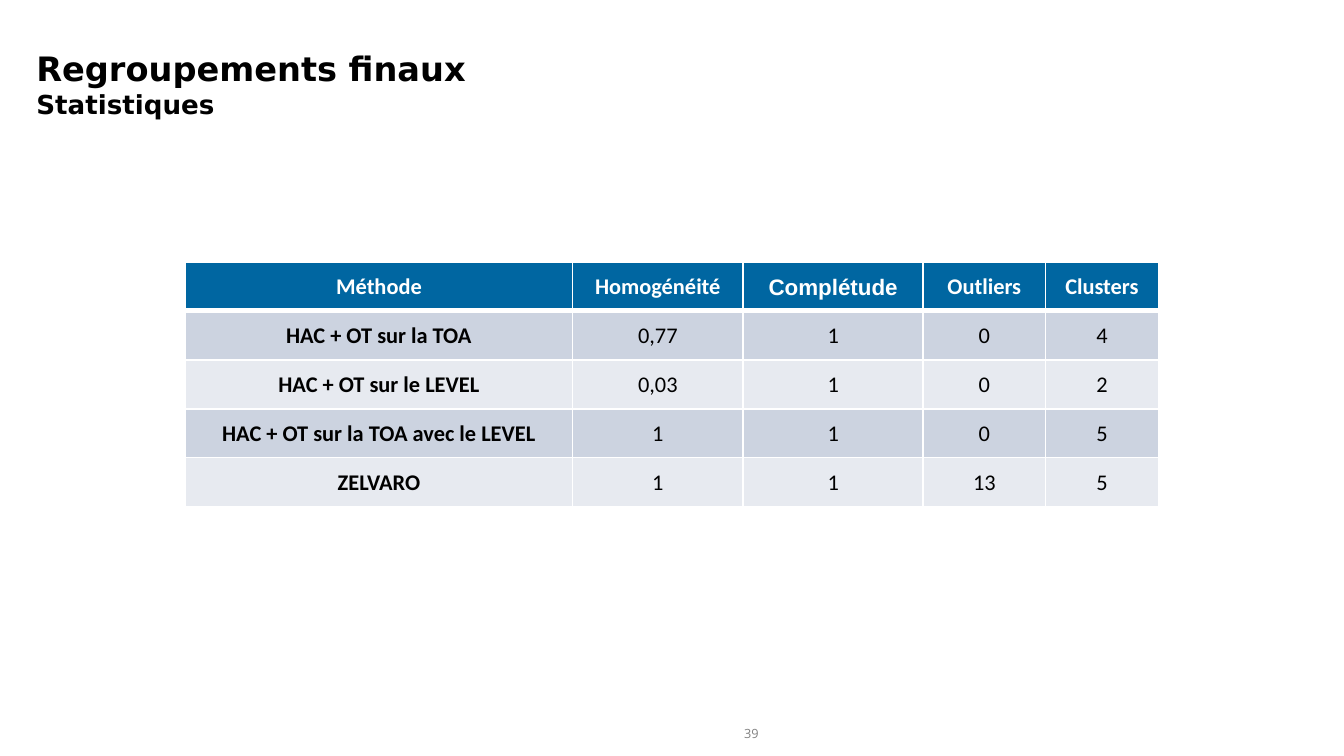
import copy
from dataclasses import dataclass

import lxml.etree
import pptx
import pptx.dml.color
import pptx.enum.text
import pptx.oxml.ns
import pptx.util

RGBColor = pptx.dml.color.RGBColor
WHITE = RGBColor(0xFF, 0xFF, 0xFF)
BLACK = RGBColor(0x00, 0x00, 0x00)
GRAY = RGBColor(0x81, 0x81, 0x81)
HEADER_BLUE = RGBColor(0x00, 0x66, 0xA1)
BAND_COLORS = (RGBColor(0xCC, 0xD3, 0xE0), RGBColor(0xE7, 0xEA, 0xF0))

# Widescreen slide, 16 by 9
SLIDE_WIDTH = pptx.util.Inches(10)
SLIDE_HEIGHT = SLIDE_WIDTH * 9 // 16
TABLE_HEIGHT = pptx.util.Inches(1.82)


@dataclass
class Column:
    heading: str
    width: float  # inches
    font: str = "Calibri"


@dataclass
class TextStyle:
    font: str
    size: float
    color: RGBColor
    bold: bool = False


COLUMNS = (
    Column("Méthode", 2.88),
    Column("Homogénéité", 1.27),
    Column("Complétude", 1.34, "Arial"),
    Column("Outliers", 0.91),
    Column("Clusters", 0.84),
)
RESULTS = (
    ("HAC + OT sur la TOA", "0,77", "1", "0", "4"),
    ("HAC + OT sur le LEVEL", "0,03", "1", "0", "2"),
    ("HAC + OT sur la TOA avec le LEVEL", "1", "1", "0", "5"),
    ("ZELVARO", "1", "1", "13", "5"),
)


def format_run(run, style: TextStyle) -> None:
    run.font.name = style.font
    run.font.size = pptx.util.Pt(style.size)
    run.font.bold = style.bold
    run.font.color.rgb = style.color


def set_borders(cell, top: float, bottom: float) -> None:
    """Draw white borders; the side borders are 1 point wide."""
    qn = pptx.oxml.ns.qn
    properties = cell._tc.get_or_add_tcPr()
    widths = {"a:lnL": 1, "a:lnR": 1, "a:lnT": top, "a:lnB": bottom}
    for position, (tag, width) in enumerate(widths.items()):
        line = lxml.etree.Element(qn(tag), w=str(pptx.util.Pt(width)))
        fill = lxml.etree.SubElement(line, qn("a:solidFill"))
        lxml.etree.SubElement(fill, qn("a:srgbClr"), val=str(WHITE))
        properties.insert(position, line)


def fill_cell(cell, text: str, style: TextStyle, color: RGBColor) -> None:
    cell.margin_left = cell.margin_right = cell.margin_top = pptx.util.Inches(0.01)
    cell.margin_bottom = 0
    cell.vertical_anchor = pptx.enum.text.MSO_ANCHOR.MIDDLE
    cell.fill.solid()
    cell.fill.fore_color.rgb = color
    paragraph = cell.text_frame.paragraphs[0]
    paragraph.text = text
    paragraph.alignment = pptx.enum.text.PP_ALIGN.CENTER
    format_run(paragraph.runs[0], style)


def add_title(slide) -> None:
    title = slide.shapes.title
    title.left, title.top = pptx.util.Inches(0.17), pptx.util.Inches(0.31)
    title.width, title.height = pptx.util.Inches(6.33), pptx.util.Inches(0.62)
    text_frame = title.text_frame
    text_frame.text = "Regroupements finaux\vStatistiques"
    text_frame.auto_size = pptx.enum.text.MSO_AUTO_SIZE.NONE
    text_frame.vertical_anchor = pptx.enum.text.MSO_ANCHOR.TOP
    paragraph = text_frame.paragraphs[0]
    paragraph.alignment = pptx.enum.text.PP_ALIGN.LEFT
    for run, size in zip(paragraph.runs, (18, 14)):
        format_run(run, TextStyle("DejaVu Sans", size, BLACK, bold=True))
    # The line break takes the size of the first line
    line_break = paragraph._p.find(pptx.oxml.ns.qn("a:br"))
    line_break.append(copy.deepcopy(paragraph.runs[0]._r.rPr))


def add_results_table(slide) -> None:
    row_count = len(RESULTS) + 1
    width = pptx.util.Inches(sum(column.width for column in COLUMNS))
    table = slide.shapes.add_table(
        row_count, len(COLUMNS), (SLIDE_WIDTH - width) // 2,
        pptx.util.Inches(1.95), width, TABLE_HEIGHT).table
    for row in table.rows:
        row.height = TABLE_HEIGHT // row_count
    for column_index, column in enumerate(COLUMNS):
        table.columns[column_index].width = pptx.util.Inches(column.width)
        # Header row, with a thicker line below
        header = table.cell(0, column_index)
        fill_cell(header, column.heading,
                  TextStyle(column.font, 12, WHITE, bold=True), HEADER_BLUE)
        set_borders(header, top=1, bottom=3)
        # Banded result rows, with bold method names
        for row_index, result in enumerate(RESULTS):
            cell = table.cell(row_index + 1, column_index)
            style = TextStyle("Calibri", 12, BLACK, bold=column_index == 0)
            fill_cell(cell, result[column_index], style, BAND_COLORS[row_index % 2])
            set_borders(cell, top=3 if row_index == 0 else 1, bottom=1)


def add_slide_number(slide, number: int) -> None:
    box = slide.shapes.add_textbox(
        pptx.util.Inches(5.25), pptx.util.Inches(5.36),
        pptx.util.Inches(0.68), pptx.util.Inches(0.2))
    text_frame = box.text_frame
    text_frame.word_wrap = True
    text_frame.margin_left = text_frame.margin_right = pptx.util.Inches(0.08)
    text_frame.margin_top = text_frame.margin_bottom = pptx.util.Inches(0.04)
    text_frame.vertical_anchor = pptx.enum.text.MSO_ANCHOR.MIDDLE
    text_frame.text = str(number)
    paragraph = text_frame.paragraphs[0]
    paragraph.alignment = pptx.enum.text.PP_ALIGN.CENTER
    format_run(paragraph.runs[0], TextStyle("Open Sans", 6.8, GRAY))


def main() -> None:
    presentation = pptx.Presentation()
    presentation.slide_width = SLIDE_WIDTH
    presentation.slide_height = SLIDE_HEIGHT
    slide = presentation.slides.add_slide(presentation.slide_layouts[5])
    add_slide_number(slide, 39)
    add_results_table(slide)
    add_title(slide)
    presentation.save("out.pptx")


if __name__ == "__main__":
    main()
